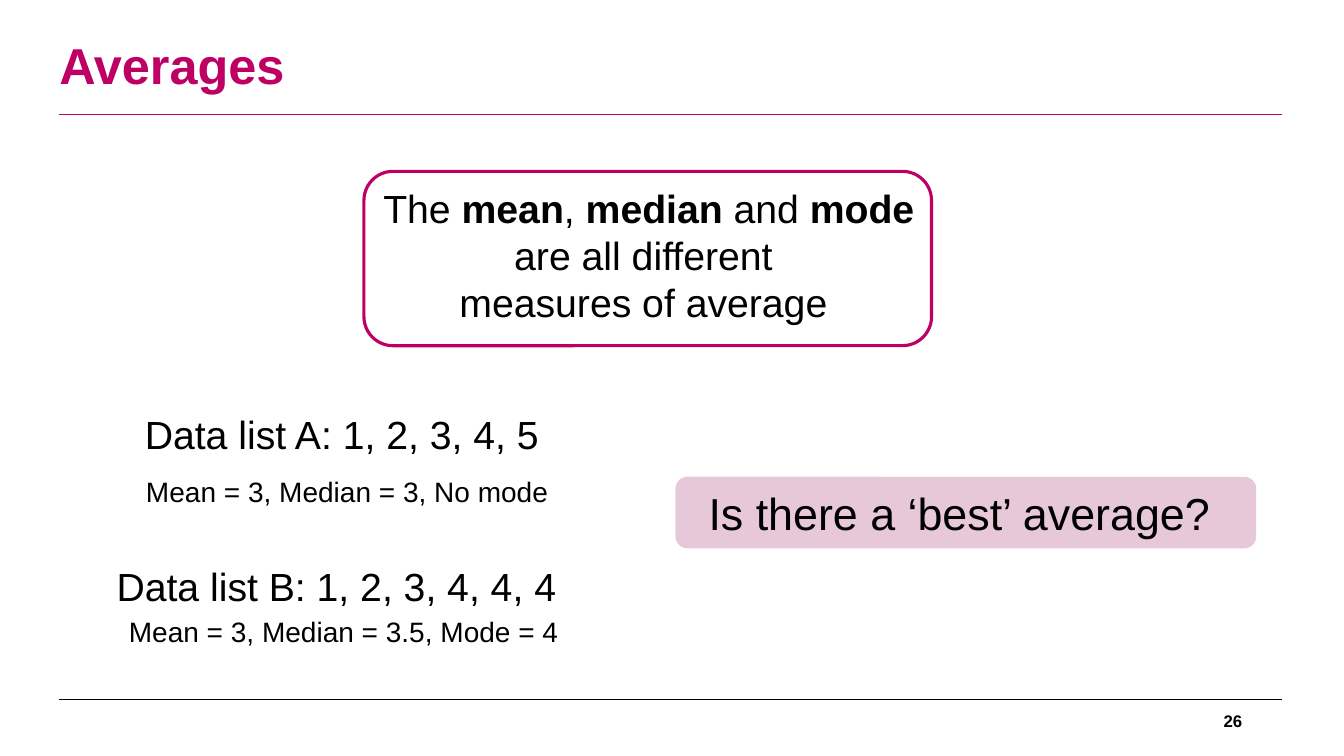
from pptx import Presentation
from pptx.dml.color import RGBColor
from pptx.enum.shapes import MSO_CONNECTOR, MSO_SHAPE
from pptx.enum.text import MSO_ANCHOR, PP_ALIGN
from pptx.oxml.xmlchemy import OxmlElement
from pptx.util import Inches, Pt

LEFT, MID, RIGHT = PP_ALIGN.LEFT, PP_ALIGN.CENTER, PP_ALIGN.RIGHT
TOP, CENTRE = MSO_ANCHOR.TOP, MSO_ANCHOR.MIDDLE
ROUND, STRAIGHT = MSO_SHAPE.ROUNDED_RECTANGLE, MSO_CONNECTOR.STRAIGHT
PINK, PALE, BLACK = "BE0064", "E6C8D9", "000000"

TITLE = "Averages"
PAGE = "26"
CLAIM = ["The *mean*, *median* and *mode*\vare all different ",
         "measures of average "]
QUERY = "Is there a ‘best’ average? "
RULES = [(6.94, BLACK), (1.14, PINK)]
DATA = [
    ("Data list A: 1, 2, 3, 4, 5", (0.89, 4.07, 5, 0.48),
     "Mean = 3, Median = 3, No mode", (1.35, 4.7, 4.37, 0.41)),
    ("Data list B: 1, 2, 3, 4, 4, 4 ", (0.89, 5.58, 5, 0.48),
     "Mean = 3, Median = 3.5, Mode = 4", (1.18, 6.08, 4.74, 0.41)),
]

deck = Presentation()
deck.slide_width, deck.slide_height = Inches(13.33), Inches(7.5)
slide = deck.slides.add_slide(deck.slide_layouts[6])


def paint(part, tone):
    if hasattr(part, "solid"):
        part.solid()
        part = part.fore_color
    part.rgb = RGBColor.from_string(tone)


def box(spot):
    return slide.shapes.add_textbox(*map(Inches, spot))


def panel(spot, fill=None, line=None):
    shape = slide.shapes.add_shape(ROUND, *map(Inches, spot))
    shape.shadow.inherit = False
    if fill:
        paint(shape.fill, fill)
    else:
        shape.fill.background()
    if line:
        paint(shape.line.color if shape.line.fill.type else shape.line.fill, line)
        shape.line.width = Pt(2.25)
    else:
        shape.line.fill.background()
    return shape


def write(shape, text, size, tone=BLACK, bold=False, align=LEFT,
          anchor=TOP, wrap=True, space=None, after=None):
    frame = shape.text_frame
    frame.word_wrap, frame.vertical_anchor = wrap, anchor
    paras = [text] if isinstance(text, str) else text
    for num, para in enumerate(paras):
        p = frame.add_paragraph() if num else frame.paragraphs[0]
        p.alignment, p.line_spacing = align, space
        if after:
            p.space_after = Pt(after)
        for row, line in enumerate(para.split("\v")):
            if row:
                p.add_line_break()
            for step, part in enumerate(line.split("*")):
                if part:
                    run = p.add_run()
                    run.text = part
                    font = run.font
                    font.name, font.size = "Arial", Pt(size)
                    font.bold = bold or step % 2 == 1
                    paint(font.fill, tone)


for y, tone in RULES:
    rule = slide.shapes.add_connector(
        STRAIGHT, Inches(0.59), Inches(y), Inches(12.72), Inches(y))
    rule.line.width = Pt(0.75)
    paint(rule.line.fill, tone)
    rule.element.spPr.append(OxmlElement("a:effectLst"))

write(box((0.49, 0.12, 10, 1.11)), TITLE, 36, tone=PINK, bold=True,
      anchor=CENTRE, space=0.9)
write(box((9.42, 6.95, 3, 0.4)), PAGE, 12, bold=True, align=RIGHT, anchor=CENTRE)

panel((3.61, 1.7, 5.63, 1.73), line=PINK)
write(box((3.67, 1.78, 5.53, 1.51)), CLAIM, 28, align=MID, wrap=False)
write(panel((6.7, 4.73, 5.76, 0.71), fill=PALE), QUERY, 32,
      align=MID, anchor=CENTRE)

for head, spot, stats, place in DATA:
    write(box(spot), head, 28, align=MID, space=0.9, after=6)
    write(box(place), stats, 20, space=0.9, after=6)

deck.save("out.pptx")
